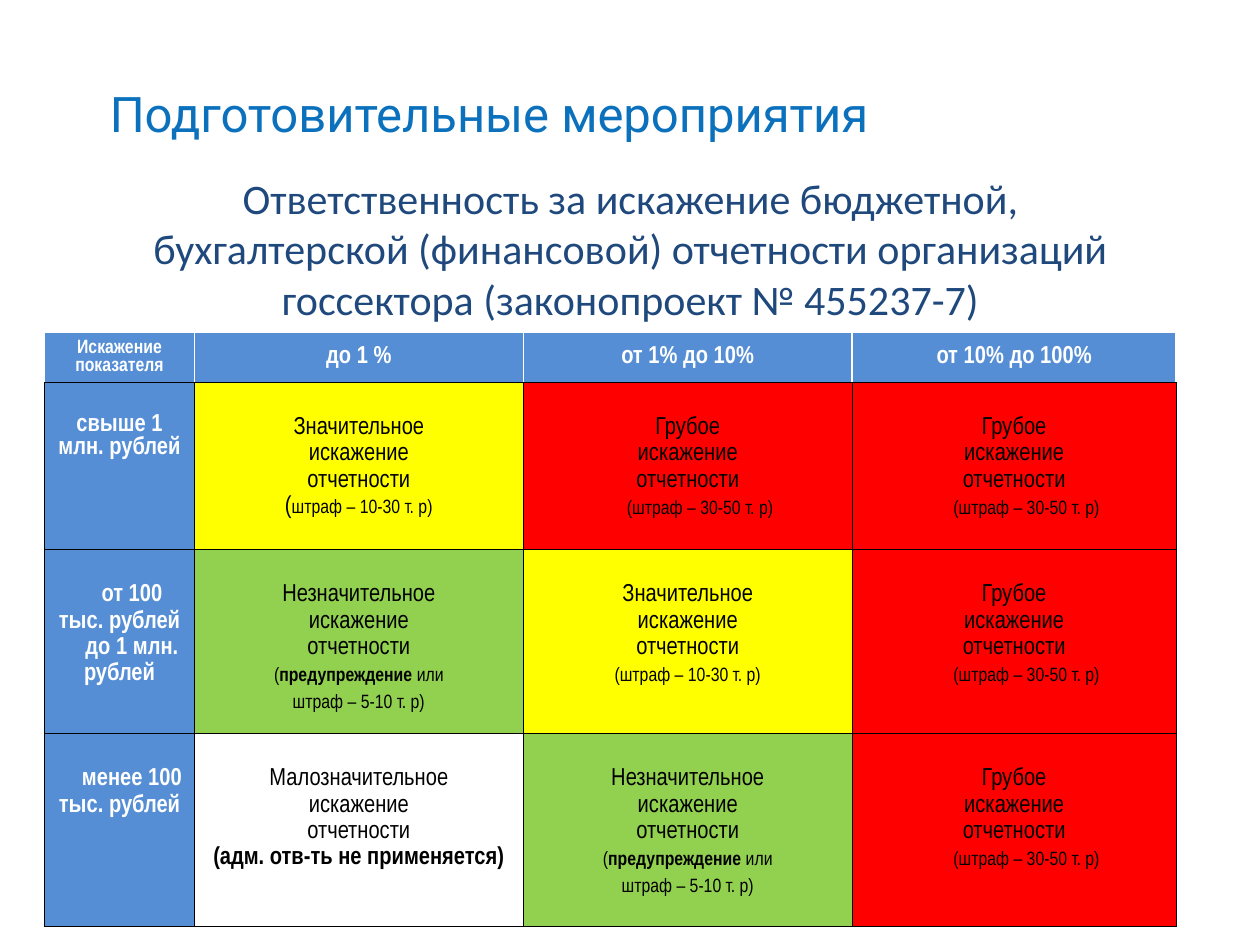
"""Build the slide on liability for distorted public-sector reporting."""
from lxml import etree
from pptx import Presentation, util as u
from pptx.dml import color
from pptx.enum import text
from pptx.oxml import ns

HUES = {"title": "0B71BD", "lead": "1F497D", "head": "558ED5", "white": "FFFFFF",
        "black": "000000", "yellow": "FFFF00", "red": "FF0000", "green": "92D050"}
TITLE = "Подготовительные мероприятия"
LEAD = ("Ответственность за искажение бюджетной, бухгалтерской (финансовой) "
        "отчетности организаций госсектора (законопроект № 455237-7)")
HEADS = [(["Искажение", "показателя"], 11), (["до 1 %"], 14),
         (["от 1% до 10%"], 14), (["от 10% до 100%"], 14)]
SUMS = [["свыше 1 млн. рублей"], ["от 100 тыс. рублей", "до 1 млн. рублей"],
        ["менее 100 тыс. рублей"]]
WARN = [[("(", 11, False), ("предупреждение", 11, True), (" или", 11, False)],
        [("штраф – 5-10 т. р)", 11, False)]]
GRADES = {
    "major": ("Значительное", "yellow", [[("(", 14, False), ("штраф – 10-30 т. р)", 11, False)]]),
    "medium": ("Значительное", "yellow", [[("(штраф – 10-30 т. р)", 11, False)]]),
    "gross": ("Грубое", "red", [[("(штраф – 30-50 т. р)", 11, False)]]),
    "minor": ("Незначительное", "green", WARN),
    "slight": ("Малозначительное", "white", [[("(адм. отв-ть не применяется)", 14, True)]]),
}
GRID = [["major", "gross", "gross"], ["minor", "medium", "gross"], ["slight", "minor", "gross"]]
COLS = [3.02, 6.63, 6.63, 6.53]
ROWS = [1.02, 3.37, 3.71, 3.89]
PAD = {"margin_left": 0.25, "margin_right": 0.25, "margin_top": 0.63, "margin_bottom": 0.1}
BARE = dict.fromkeys(PAD, 0)


def put(item, vals):
    for key, val in vals.items():
        setattr(item, key, val)


def write(para, runs, face, hue, align=text.PP_ALIGN.CENTER, pitch=None, dent=0):
    if dent:
        para._p.get_or_add_pPr().set("indent", str(u.Cm(dent)))
    put(para, {"alignment": align, "line_spacing": pitch})
    for words, size, bold in runs:
        run = para.add_run()
        run.text = words
        put(run.font, {"name": face, "size": u.Pt(size), "bold": bold})
        run.font.color.rgb = color.RGBColor.from_string(HUES[hue])


def edge(cell, side, hue, width):
    line = etree.SubElement(cell._tc.get_or_add_tcPr(), ns.qn(f"a:ln{side}"), w=str(u.Pt(width)))
    fill = etree.SubElement(line, ns.qn("a:solidFill"))
    etree.SubElement(fill, ns.qn("a:srgbClr"), val=HUES[hue])


def dress(cell, hue, pad, head=False):
    for side in "LRTB":
        pale = head and side != "B"
        edge(cell, side, "white" if pale else "black", 1 if pale else 0.5)
    cell.fill.solid()
    cell.fill.fore_color.rgb = color.RGBColor.from_string(HUES[hue])
    put(cell, {key: u.Cm(val) for key, val in pad.items()})
    cell.vertical_anchor = text.MSO_ANCHOR.MIDDLE if head else text.MSO_ANCHOR.TOP


def fill(cell, lines, hue, forms):
    frame = cell.text_frame
    for n, (runs, form) in enumerate(zip(lines, forms)):
        para = frame.add_paragraph() if n else frame.paragraphs[0]
        write(para, runs, "Arial Narrow", hue, **form)


def label(shape, box, words, size, face, hue, align):
    put(shape, dict(zip(("left", "top", "width", "height"), map(u.Cm, box))))
    frame = shape.text_frame
    put(frame, {"word_wrap": True, "auto_size": text.MSO_AUTO_SIZE.NONE,
                "vertical_anchor": text.MSO_ANCHOR.TOP})
    write(frame.paragraphs[0], [(words, size, False)], face, hue, align)


def main():
    deck = Presentation()
    put(deck, {"slide_width": u.Cm(25.4), "slide_height": u.Cm(19.05)})
    slide = deck.slides.add_slide(deck.slide_layouts[5])
    label(slide.shapes.title, (1.96, 1.55, 24, 1.45), TITLE, 28, "Roboto", "title",
          text.PP_ALIGN.LEFT)
    grid = slide.shapes.add_table(len(ROWS), len(COLS), u.Cm(0.9), u.Cm(6.69),
                                  u.Cm(sum(COLS)), u.Cm(sum(ROWS))).table
    put(grid, {"first_row": False, "horz_banding": False})
    for col, wide in zip(grid.columns, COLS):
        col.width = u.Cm(wide)
    for row, tall in zip(grid.rows, ROWS):
        row.height = u.Cm(tall)

    for c, (lines, size) in enumerate(HEADS):
        cell = grid.cell(0, c)
        dress(cell, "head", BARE, True)
        fill(cell, [[(line, size, True)] for line in lines], "white", [{}] * len(lines))
    pitch = {"pitch": u.Pt(15)}
    inset = {**pitch, "dent": 0.5}
    for r, (lines, names) in enumerate(zip(SUMS, GRID), 1):
        cell = grid.cell(r, 0)
        dress(cell, "head", PAD)
        fill(cell, [[(line, 14, True)] for line in lines], "white",
             [inset if r > 1 else {}] * len(lines))
        for c, name in enumerate(names, 1):
            kind, hue, tail = GRADES[name]
            cell = grid.cell(r, c)
            dress(cell, hue, PAD)
            body = [[(line, 14, False)] for line in (kind, "искажение", "отчетности")]
            last = inset if name == "gross" else pitch
            fill(cell, body + tail, "black", [pitch] * len(body) + [last] * len(tail))

    lead = slide.shapes.add_textbox(0, 0, 0, 0)
    label(lead, (2.31, 3.35, 20.8, 3.33), LEAD, 24, "Calibri", "lead", text.PP_ALIGN.CENTER)
    deck.save("out.pptx")


if __name__ == "__main__":
    main()
